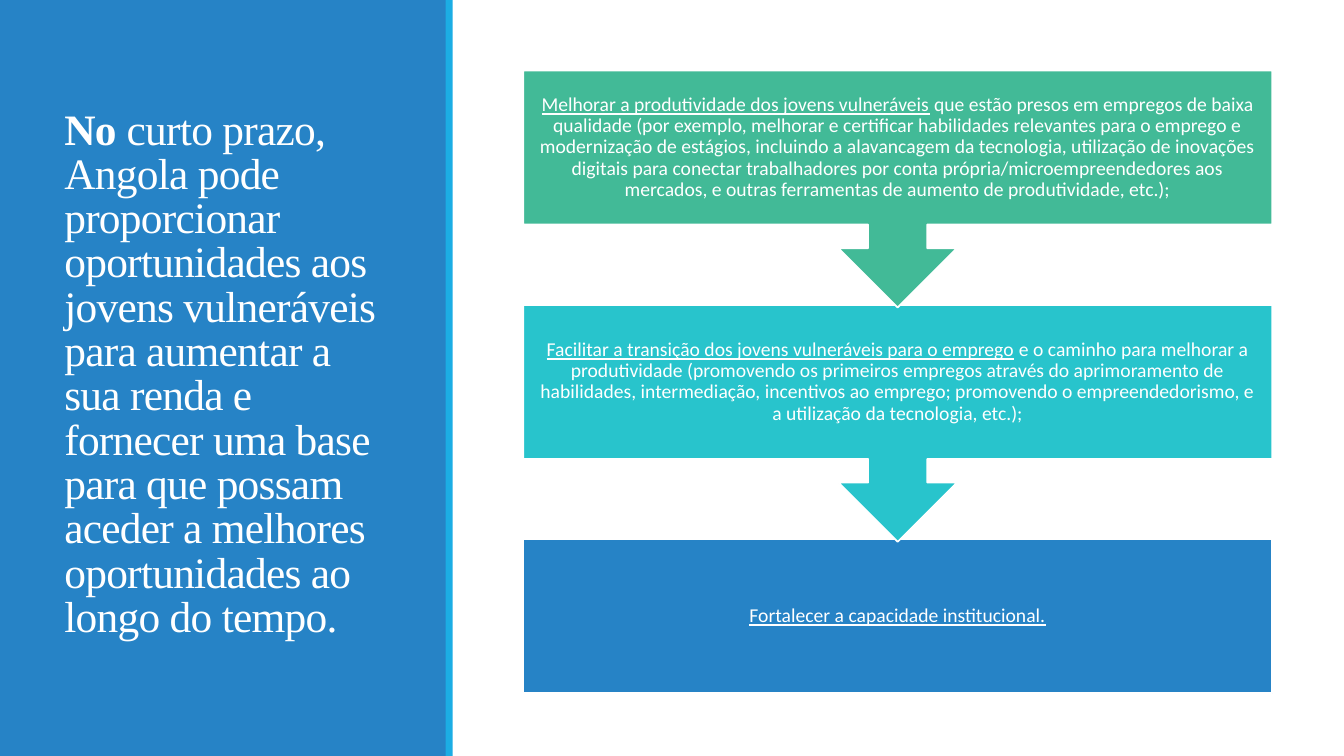
from pptx import Presentation
from pptx.dml.color import RGBColor
from pptx.enum.shapes import MSO_SHAPE
from pptx.enum.text import MSO_ANCHOR, PP_ALIGN
from pptx.util import Pt

RECTANGLE = MSO_SHAPE.RECTANGLE
ARROW_CALLOUT = MSO_SHAPE.UP_ARROW_CALLOUT
MIDDLE = MSO_ANCHOR.MIDDLE
LEFT, CENTER = PP_ALIGN.LEFT, PP_ALIGN.CENTER

WHITE = RGBColor(0xFF, 0xFF, 0xFF)
BLUE = RGBColor(0x26, 0x83, 0xC6)
SKY = RGBColor(0x1C, 0xAD, 0xE4)
TEAL = RGBColor(0x28, 0xC4, 0xCC)
GREEN = RGBColor(0x42, 0xBA, 0x97)

# Font formats
TITLE_FONT = {"name": "Times New Roman", "size": Pt(31)}
STEP_FONT = {"name": "Calibri", "size": Pt(14)}

# Step geometry in points
STEP_LEFT, STEP_TOP, STEP_WIDTH = 373.7, 50.4, 535
STEP_PITCH, BOX_HEIGHT, CALLOUT_HEIGHT = 167.4, 110, 169.2

TITLE = [
    ("No ", {"bold": True}),
    ("curto prazo, Angola pode proporcionar oportunidades aos jovens "
     "vulneráveis para aumentar a sua renda e fornecer uma base para que "
     "possam aceder a melhores oportunidades ao longo do tempo.",
     {"bold": False}),
]

# Colour, underlined lead and remaining text of each step
STEPS = [
    (GREEN, "Melhorar a produtividade dos jovens vulneráveis",
     " que estão presos em empregos de baixa qualidade (por exemplo, melhorar "
     "e certificar habilidades relevantes para o emprego e modernização de "
     "estágios, incluindo a alavancagem da tecnologia, utilização de inovações "
     "digitais para conectar trabalhadores por conta "
     "própria/microempreendedores aos mercados, e outras ferramentas de "
     "aumento de produtividade, etc.);"),
    (TEAL, "Facilitar a transição dos jovens vulneráveis para o emprego",
     " e o caminho para melhorar a produtividade (promovendo os primeiros "
     "empregos através do aprimoramento de habilidades, intermediação, "
     "incentivos ao emprego; promovendo o empreendedorismo, e a utilização da "
     "tecnologia, etc.);"),
    (BLUE, "Fortalecer a capacidade institucional.", ""),
]


class SlideBuilder:
    def __init__(self, slide, text_color):
        self.slide = slide
        self.text_color = text_color

    def add_block(self, kind, box, fill, line=None, rotation=0):
        shape = self.slide.shapes.add_shape(kind, *map(Pt, box))
        shape.shadow.inherit = False
        shape.rotation = rotation
        shape.fill.solid()
        shape.fill.fore_color.rgb = fill
        if line is None:
            shape.line.fill.background()
        else:
            shape.line.color.rgb = line
            shape.line.width = Pt(1.25)

    def add_text(self, box, runs, font, align, line_spacing, inset, tracking=0):
        frame = self.slide.shapes.add_textbox(*map(Pt, box)).text_frame
        frame_format = {"word_wrap": True, "vertical_anchor": MIDDLE,
                        "margin_left": Pt(inset), "margin_right": Pt(inset)}
        for name, value in frame_format.items():
            setattr(frame, name, value)
        paragraph = frame.paragraphs[0]
        paragraph.alignment = align
        paragraph.line_spacing = line_spacing
        for text, run_format in runs:
            run = paragraph.add_run()
            run.text = text
            run.font.color.rgb = self.text_color
            for name, value in {**font, **run_format}.items():
                setattr(run.font, name, value)
            if tracking:
                run.font._element.set("spc", str(int(tracking * 100)))


def main():
    presentation = Presentation()
    presentation.slide_width, presentation.slide_height = Pt(960), Pt(540)
    slide = presentation.slides.add_slide(presentation.slide_layouts[6])
    builder = SlideBuilder(slide, WHITE)

    # Title panel with its accent stripe
    builder.add_block(RECTANGLE, (0, 0, 319, 540), BLUE)
    builder.add_text((38.9, 41, 242.6, 454.3), TITLE, TITLE_FONT, LEFT,
                     0.85, 7.2, tracking=-0.5)
    builder.add_block(RECTANGLE, (318.3, 0, 5, 540), SKY)

    # Steps from the bottom up, so each arrow tip lies over the next box
    last = len(STEPS) - 1
    for index in range(last, -1, -1):
        color, lead, rest = STEPS[index]
        top = STEP_TOP + index * STEP_PITCH
        text_box = (STEP_LEFT, top, STEP_WIDTH, BOX_HEIGHT)
        if index == last:
            builder.add_block(RECTANGLE, text_box, color, WHITE)
        else:
            builder.add_block(ARROW_CALLOUT,
                              (STEP_LEFT, top, STEP_WIDTH, CALLOUT_HEIGHT),
                              color, WHITE, rotation=180)
        runs = [(lead, {"underline": True})]
        if rest:
            runs.append((rest, {"underline": False}))
        builder.add_text(text_box, runs, STEP_FONT, CENTER, 0.9, 7.9)

    presentation.save("out.pptx")


if __name__ == "__main__":
    main()
